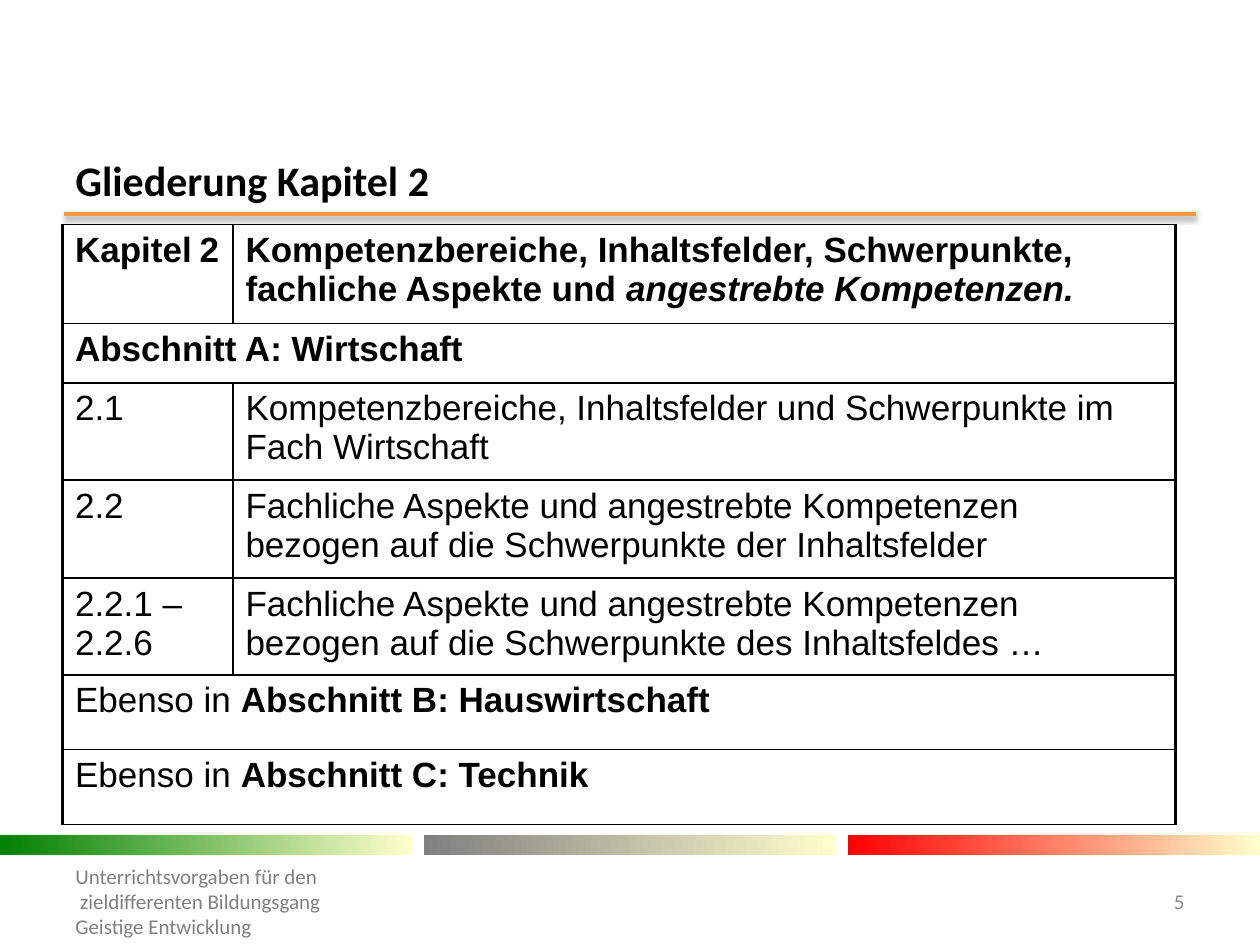
import lxml.etree
import pptx
import pptx.dml.color
import pptx.enum.shapes
import pptx.enum.text
import pptx.oxml
import pptx.oxml.ns
import pptx.util

Pt = pptx.util.Pt
RGBColor = pptx.dml.color.RGBColor
Align = pptx.enum.text.PP_ALIGN

BLACK = RGBColor(0x00, 0x00, 0x00)
ORANGE = RGBColor(0xF7, 0x96, 0x46)
GREEN = RGBColor(0x00, 0x80, 0x00)
GRAY = RGBColor(0x80, 0x80, 0x80)
RED = RGBColor(0xFF, 0x00, 0x00)
CREAM = RGBColor(0xFF, 0xFF, 0xCC)
NUMBER_GRAY = RGBColor(0x8C, 0x8C, 0x8C)

NAMESPACE = pptx.oxml.ns.nsdecls("a")
THIN, THICK = 1, 2.25


def add_text(left, top, width, height, lines, size, color, bold=False, align=Align.LEFT):
    box = slide.shapes.add_textbox(Pt(left), Pt(top), Pt(width), Pt(height))
    frame = box.text_frame
    frame.word_wrap = True
    frame.vertical_anchor = pptx.enum.text.MSO_ANCHOR.MIDDLE
    frame.text = "\n".join(lines)
    for para in frame.paragraphs:
        para.alignment = align
        para.font.name = "Calibri"
        para.font.size = Pt(size)
        para.font.bold = bold
        para.font.color.rgb = color


def set_borders(cell, widths):
    """Draw black borders; widths are in points: left, right, top, bottom."""
    properties = cell._tc.get_or_add_tcPr()
    for index, (side, width) in enumerate(zip("LRTB", widths)):
        properties.insert(index, pptx.oxml.parse_xml(
            f'<a:ln{side} {NAMESPACE} w="{Pt(width)}"><a:solidFill>'
            f'<a:srgbClr val="{BLACK}"/></a:solidFill></a:ln{side}>'))


deck = pptx.Presentation()
deck.slide_width = Pt(720)
deck.slide_height = Pt(540)
slide = deck.slides.add_slide(deck.slide_layouts[6])

# Rule under the title
rule = slide.shapes.add_connector(
    pptx.enum.shapes.MSO_CONNECTOR.STRAIGHT, Pt(36.7), Pt(122.4), Pt(683.3), Pt(122.4))
rule.line.color.rgb = ORANGE
rule.line.width = Pt(2)
rule._element.spPr.append(pptx.oxml.parse_xml(
    f'<a:effectLst {NAMESPACE}><a:outerShdw blurRad="{Pt(3.1)}" dist="{Pt(1.6)}" '
    f'dir="5400000" rotWithShape="0"><a:srgbClr val="{BLACK}">'
    '<a:alpha val="38000"/></a:srgbClr></a:outerShdw></a:effectLst>'))

# Gradient bars above the footer
BAR_WIDTH = 235.4
BAR_STEP = (720 - BAR_WIDTH) / 2
for index, color in enumerate((GREEN, GRAY, RED)):
    bar = slide.shapes.add_shape(
        pptx.enum.shapes.MSO_SHAPE.RECTANGLE,
        Pt(index * BAR_STEP), Pt(477.2), Pt(BAR_WIDTH), Pt(11.5))
    bar.shadow.inherit = False
    bar.line.fill.background()
    bar.fill.gradient()
    bar.fill.gradient_angle = 0
    for stop, stop_color in zip(bar.fill.gradient_stops, (color, CREAM)):
        stop.color.rgb = stop_color

add_text(36, 88.6, 648, 28, ["Gliederung Kapitel 2"], 24, BLACK, bold=True)
add_text(36, 500.4, 414.7, 28.8, [
    "Unterrichtsvorgaben für den",
    " zieldifferenten Bildungsgang",
    "Geistige Entwicklung",
], 12, GRAY)
add_text(638, 500.4, 46, 28.8, ["5"], 12, NUMBER_GRAY, align=Align.RIGHT)

# Each cell is a list of (text, style) runs; a row with one cell spans both columns.
ROWS = [
    (56.6, [[("Kapitel", "b"), (" ", "b small"), ("2", "b")],
            [("Kompetenzbereiche, Inhaltsfelder, Schwerpunkte, fachliche Aspekte und ", "b"),
             ("angestrebte Kompetenzen.", "b i")]]),
    (34, [[("Abschnitt A: Wirtschaft", "b")]]),
    (55.6, [[("2.1", "")],
            [("Kompetenzbereiche, Inhaltsfelder und Schwerpunkte im Fach Wirtschaft", "")]]),
    (56, [[("2.2", "")],
          [("Fachliche Aspekte und angestrebte Kompetenzen bezogen auf die "
            "Schwerpunkte der Inhaltsfelder", "")]]),
    (51.6, [[("2.2.1 – 2.2.6", "")],
            [("Fachliche Aspekte und angestrebte Kompetenzen bezogen auf die "
              "Schwerpunkte des Inhaltsfeldes …", "")]]),
    (42.8, [[("Ebenso in ", ""), ("Abschnitt B: Hauswirtschaft", "b")]]),
    (42.8, [[("Ebenso in ", ""), ("Abschnitt C: Technik", "b")]]),
]
COLUMN_WIDTHS = (97.4, 538.6)

table = slide.shapes.add_table(
    len(ROWS), 2, Pt(35.7), Pt(128.2), Pt(sum(COLUMN_WIDTHS)),
    Pt(sum(height for height, _ in ROWS))).table
table.first_row = False
table.horz_banding = False
for column, width in zip(table.columns, COLUMN_WIDTHS):
    column.width = Pt(width)

for row_index, (height, contents) in enumerate(ROWS):
    table.rows[row_index].height = Pt(height)
    left_cell, right_cell = table.cell(row_index, 0), table.cell(row_index, 1)
    spans = len(contents) == 1
    if spans:
        left_cell.merge(right_cell)
    for cell in (left_cell, right_cell):
        cell.fill.background()
    set_borders(left_cell, (THICK, THICK if spans else THIN, THIN, THIN))
    set_borders(right_cell, (THIN, THICK, THIN, THIN))
    for cell, runs in zip((left_cell, right_cell), contents):
        para = cell.text_frame.paragraphs[0]
        para.font.name = "Arial"
        para.font.size = Pt(20)
        para.font.color.rgb = BLACK
        for text, style in runs:
            span = para.add_run()
            span.text = text
            span.font.bold = "b" in style.split()
            span.font.italic = "i" in style.split()
            if "small" in style:
                span.font.size = Pt(16)

deck.save("out.pptx")
